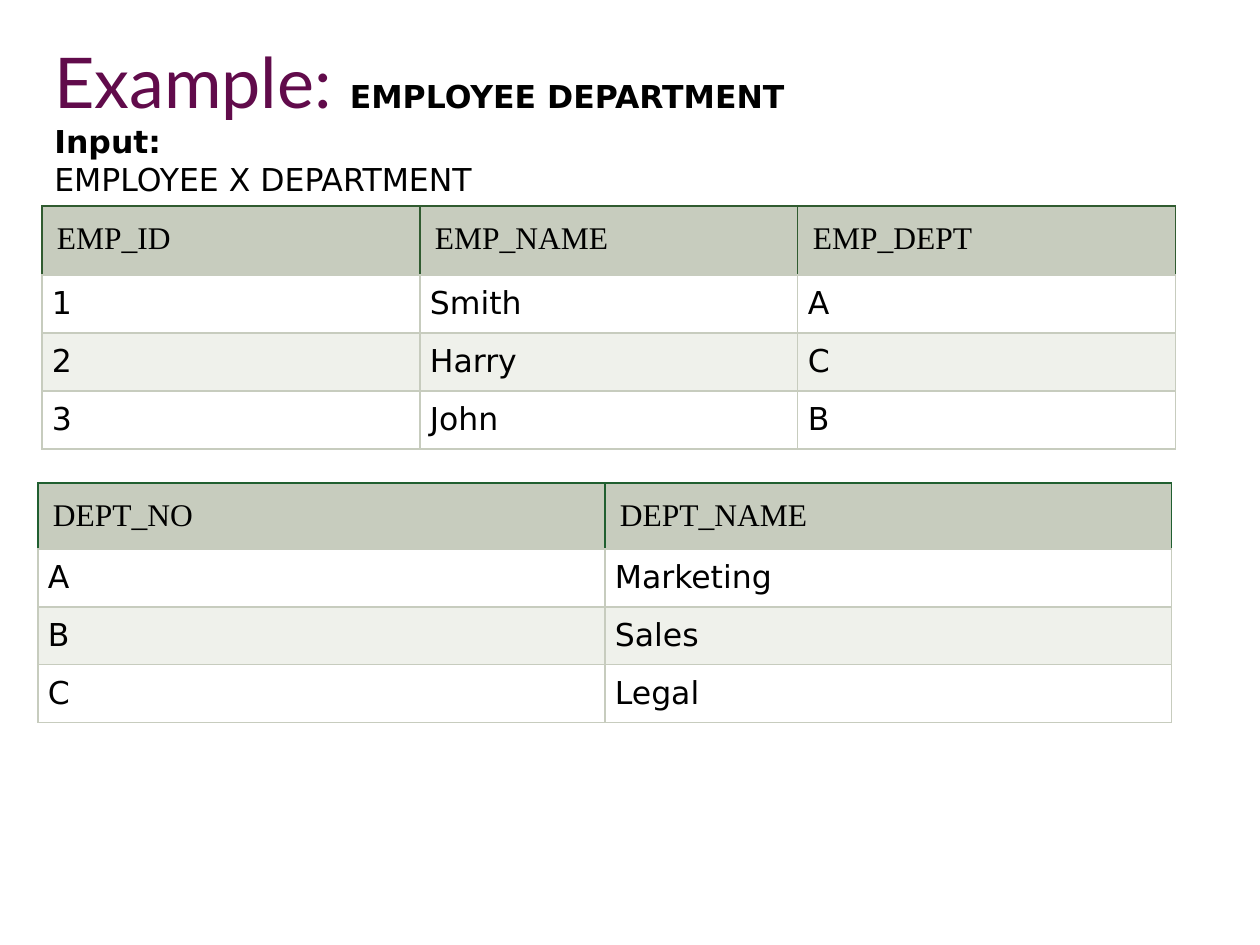
from lxml.etree import SubElement
from pptx import Presentation
from pptx.dml.color import RGBColor
from pptx.oxml.ns import qn
from pptx.util import Emu, Pt

PX = 914400 // 126
SANS, SERIF, TITLE = "DejaVu Sans", "Times New Roman", "Lato"
HEAD, BAND, WHITE = "C7CCBE", "EFF1EB", "FFFFFF"

HEADING = [
    [("Example: ", dict(size=40, font=TITLE, color="610B4B")),
     ("EMPLOYEE DEPARTMENT", dict(bold=True))],
    [("Input:", dict(bold=True))],
    [("EMPLOYEE X DEPARTMENT", {})],
]
TABLES = [
    dict(left=42, top=206, col=378, head=69, row=58, edge="305B30", rows=[
        ("EMP_ID", "EMP_NAME", "EMP_DEPT"),
        ("1", "Smith", "A"),
        ("2", "Harry", "C"),
        ("3", "John", "B")]),
    dict(left=38, top=483, col=567, head=66, row=58, edge="205F30", rows=[
        ("DEPT_NO", "DEPT_NAME"),
        ("A", "Marketing"),
        ("B", "Sales"),
        ("C", "Legal")]),
]


def px(n):
    return Emu(n * PX)


def rgb(color):
    return RGBColor.from_string(color)


def add_text(p, text, size=18, font=SANS, color="000000", bold=False):
    r = p.add_run()
    r.text = text
    r.font.size, r.font.name, r.font.bold = Pt(size), font, bold
    r.font.color.rgb = rgb(color)


def set_borders(cell, side, bottom):
    """Draw the left, right and top lines in one colour, the bottom in another."""
    tcPr = cell._tc.get_or_add_tcPr()
    for tag, color in (("lnL", side), ("lnR", side), ("lnT", side), ("lnB", bottom)):
        ln = SubElement(tcPr, qn(f"a:{tag}"), w=str(Pt(0.75)))
        SubElement(SubElement(ln, qn("a:solidFill")), qn("a:srgbClr"), val=color)


def add_data_table(slide, left, top, col, head, row, edge, rows):
    n_rows, n_cols = len(rows), len(rows[0])
    height = head + row * (n_rows - 1)
    table = slide.shapes.add_table(n_rows, n_cols, px(left), px(top),
                                   px(col * n_cols), px(height)).table
    table.first_row = table.horz_banding = False
    for column in table.columns:
        column.width = px(col)
    for i, values in enumerate(rows):
        is_head = i == 0
        table.rows[i].height = px(head if is_head else row)
        fill = HEAD if is_head else (WHITE if i % 2 else BAND)
        for j, value in enumerate(values):
            cell = table.cell(i, j)
            margin = px(15 if is_head else 10)
            cell.margin_left = cell.margin_right = margin
            cell.margin_top = cell.margin_bottom = margin
            set_borders(cell, edge if is_head else HEAD, HEAD)
            cell.fill.solid()
            cell.fill.fore_color.rgb = rgb(fill)
            add_text(cell.text_frame.paragraphs[0], value,
                     font=SERIF if is_head else SANS)


def add_heading(slide):
    tf = slide.shapes.add_textbox(px(42), px(32), px(1061), px(174)).text_frame
    tf.word_wrap = True
    for i, runs in enumerate(HEADING):
        p = tf.add_paragraph() if i else tf.paragraphs[0]
        for text, style in runs:
            add_text(p, text, **style)


def main():
    prs = Presentation()
    prs.slide_width, prs.slide_height = px(1260), px(945)
    slide = prs.slides.add_slide(prs.slide_layouts[6])
    for table in TABLES:
        add_data_table(slide, **table)
    add_heading(slide)
    prs.save("out.pptx")


if __name__ == "__main__":
    main()
